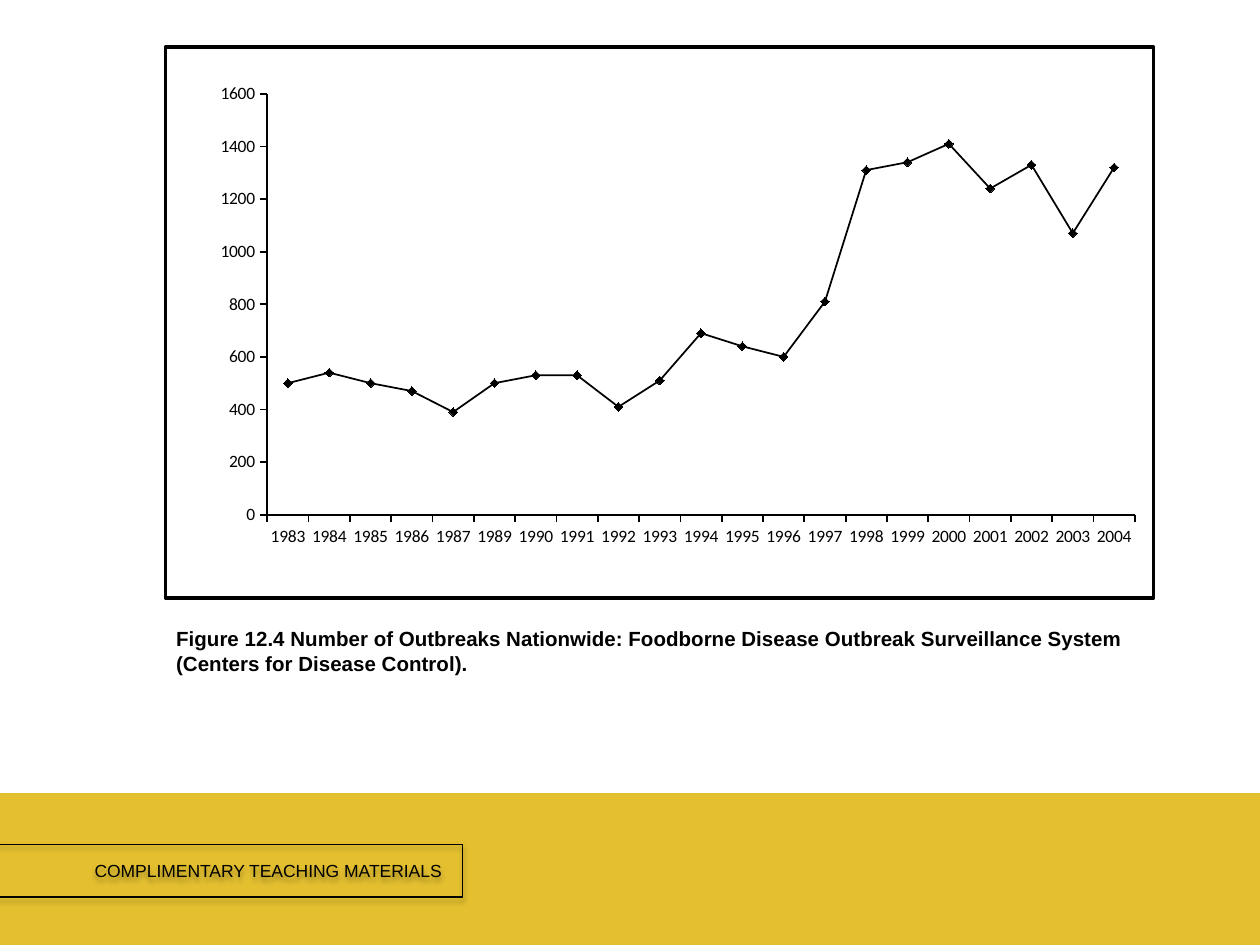
from lxml import etree
from pptx import Presentation
from pptx import util as u
from pptx.chart.data import CategoryChartData
from pptx.dml.color import RGBColor
from pptx.enum import chart as charts, shapes, text
from pptx.oxml import parse_xml
from pptx.oxml.ns import nsdecls, qn

BLACK, WHITE, GOLD = "000000", "FFFFFF", "E4C030"
YEARS = [str(year) for year in range(1983, 2005) if year != 1988]
OUTBREAKS = [500, 540, 500, 470, 390, 500, 530, 530, 410, 510, 690,
             640, 600, 810, 1310, 1340, 1410, 1240, 1330, 1070, 1320]
CAPTION = ("Figure 12.4 Number of Outbreaks Nationwide: Foodborne Disease Outbreak "
           "Surveillance System (Centers for Disease Control).")


def rgb(value):
    """Turn a hex string into a colour."""
    return RGBColor.from_string(value)


def paint(part, fill=None, line=None, width=1):
    """Set the fill and the outline of a shape or marker."""
    if fill:
        part.fill.solid()
        part.fill.fore_color.rgb = rgb(fill)
    else:
        part.fill.background()
    part.line.color.rgb = rgb(line)
    part.line.width = u.Pt(width)


def write(shape, words, size, anchor, insets, bold=False):
    """Write one left-aligned paragraph into a shape."""
    frame = shape.text_frame
    frame.word_wrap = True
    frame.vertical_anchor = anchor
    (frame.margin_left, frame.margin_top,
     frame.margin_right, frame.margin_bottom) = map(u.Inches, insets)
    paragraph = frame.paragraphs[0]
    paragraph.text = words
    paragraph.alignment = text.PP_ALIGN.LEFT
    font = paragraph.font
    font.name, font.size, font.bold = "Arial", u.Pt(size), bold
    font.color.rgb = rgb(BLACK)


def add_footer(slide, left, top, width, height):
    """Add the gold band and its shadowed label."""
    rectangle = shapes.MSO_SHAPE.RECTANGLE
    band = slide.shapes.add_shape(rectangle, left, top, width, height)
    band.shadow.inherit = False
    paint(band, GOLD, GOLD, 2)
    label = slide.shapes.add_shape(rectangle, left - u.Inches(0.04), top + u.Inches(0.39),
                                   u.Inches(3.71), u.Inches(0.42))
    label.shadow.inherit = False
    paint(label, line=BLACK, width=0.75)
    effects = label.element.spPr.find(qn("a:effectLst"))
    shadow = etree.SubElement(effects, qn("a:outerShdw"), blurRad=str(u.Pt(3.1)),
                              dist=str(u.Pt(1.8)), dir="5400000", rotWithShape="0")
    color = etree.SubElement(shadow, qn("a:srgbClr"), val=BLACK)
    etree.SubElement(color, qn("a:alpha"), val="35000")
    write(label, "COMPLIMENTARY TEACHING MATERIALS", 10, text.MSO_ANCHOR.MIDDLE,
          (0.79, 0.05, 0.1, 0.05))


def add_caption(slide, left, top, width, height):
    """Add the bold figure caption."""
    caption = slide.shapes.add_textbox(left, top, width, height)
    write(caption, CAPTION, 11.7, text.MSO_ANCHOR.TOP, (0.1, 0.08, 0.1, 0.05), True)


def frame_chart(chart):
    """Give the chart its white ground, black border and inner plot position."""
    places = zip("xywh", (0.103, 0.085, 0.878, 0.764))
    sizes = "".join(f'<c:{name} val="{value}"/>' for name, value in places)
    layout = parse_xml(
        f'<c:layout {nsdecls("c")}><c:manualLayout><c:layoutTarget val="inner"/>'
        f'<c:xMode val="edge"/><c:yMode val="edge"/>{sizes}</c:manualLayout></c:layout>')
    space = chart.element
    plot_area = space.find(qn("c:chart")).find(qn("c:plotArea"))
    for old in plot_area.findall(qn("c:layout")):
        plot_area.remove(old)
    plot_area.insert(0, layout)
    border = parse_xml(
        f'<c:spPr {nsdecls("c", "a")}><a:solidFill><a:srgbClr val="{WHITE}"/></a:solidFill>'
        f'<a:ln w="{u.Pt(2)}"><a:solidFill><a:srgbClr val="{BLACK}"/></a:solidFill></a:ln></c:spPr>')
    space.find(qn("c:chart")).addnext(border)


def add_outbreak_chart(slide, left, top, width, height):
    """Add the line chart of outbreaks by year."""
    data = CategoryChartData()
    data.categories = YEARS
    data.add_series("Series 1", OUTBREAKS)
    chart = slide.shapes.add_chart(charts.XL_CHART_TYPE.LINE_MARKERS,
                                   left, top, width, height, data).chart
    chart.has_legend = chart.has_title = False
    chart.font.name, chart.font.size = "Calibri", u.Pt(10)
    chart.font.color.rgb = rgb(BLACK)
    for axis in (chart.category_axis, chart.value_axis):
        axis.has_major_gridlines = False
        axis.major_tick_mark = charts.XL_TICK_MARK.OUTSIDE
        axis.minor_tick_mark = charts.XL_TICK_MARK.NONE
        axis.format.line.color.rgb = rgb(BLACK)
        axis.format.line.width = u.Pt(1)
    scale = chart.value_axis
    scale.minimum_scale, scale.maximum_scale, scale.major_unit = 0, 1600, 200
    chart.plots[0].vary_by_categories = False
    series = chart.plots[0].series[0]
    series.smooth = False
    series.format.line.color.rgb = rgb(BLACK)
    series.format.line.width = u.Pt(1)
    series.marker.style = charts.XL_MARKER_STYLE.DIAMOND
    series.marker.size = 5
    paint(series.marker.format, BLACK, BLACK)
    frame_chart(chart)


def main():
    """Build and save the slide."""
    presentation = Presentation()
    presentation.slide_width, presentation.slide_height = u.Inches(10), u.Inches(7.5)
    slide = presentation.slides.add_slide(presentation.slide_layouts[6])
    add_footer(slide, *map(u.Inches, (0, 6.31, 10, 1.19)))
    add_caption(slide, *map(u.Inches, (1.3, 4.89, 7.87, 1.09)))
    add_outbreak_chart(slide, *map(u.Inches, (1.3, 0.36, 7.87, 4.4)))
    presentation.save("out.pptx")


if __name__ == "__main__":
    main()
